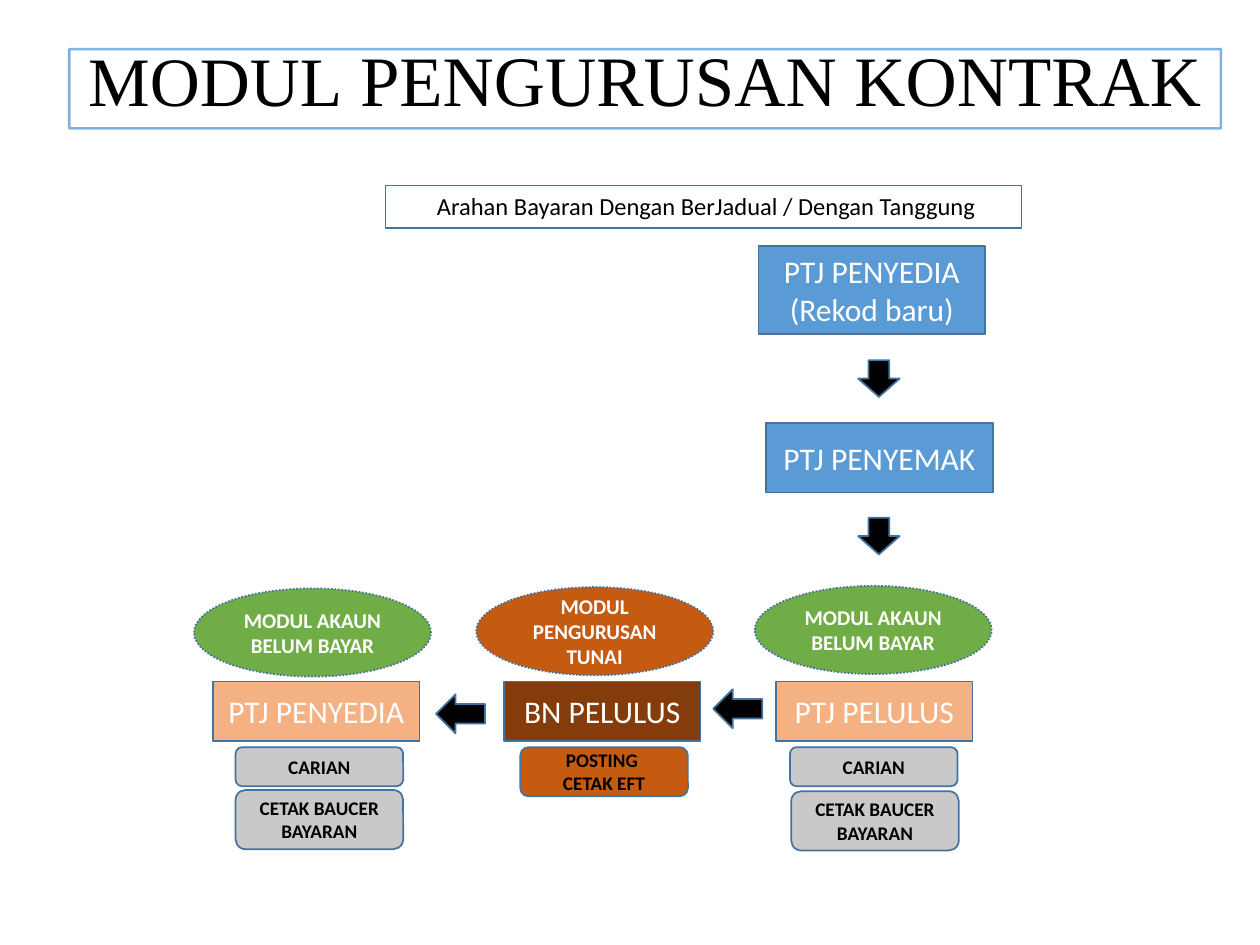
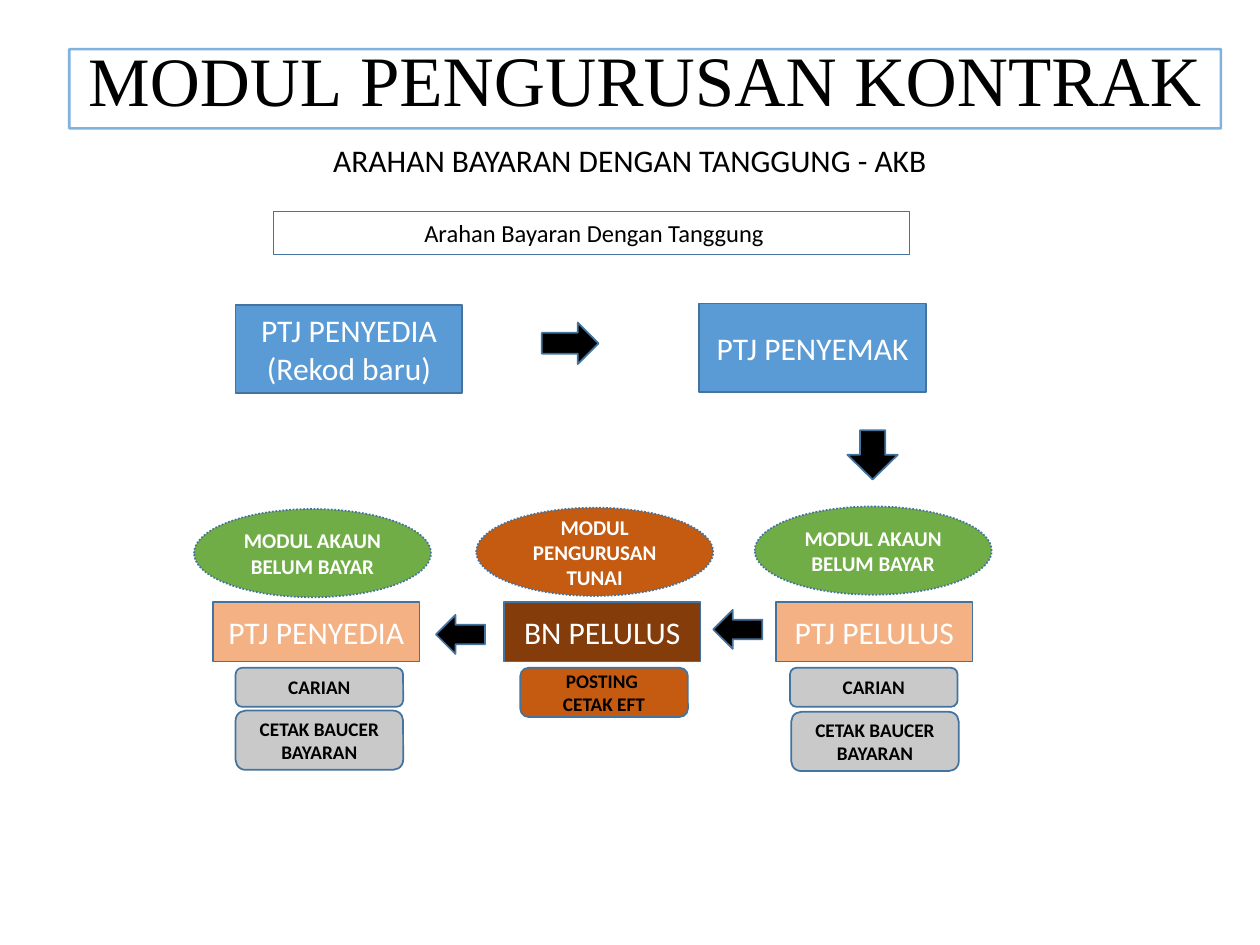
from dataclasses import dataclass

from lxml import etree
from pptx import Presentation
from pptx.dml.color import RGBColor
from pptx.enum.dml import MSO_LINE
from pptx.enum.shapes import MSO_SHAPE
from pptx.enum.text import MSO_ANCHOR, PP_ALIGN
from pptx.oxml.ns import qn
from pptx.util import Pt

RECTANGLE = MSO_SHAPE.RECTANGLE
ROUNDED = MSO_SHAPE.ROUNDED_RECTANGLE
ELLIPSE = MSO_SHAPE.OVAL
ARROW = MSO_SHAPE.RIGHT_ARROW
DOTTED = MSO_LINE.ROUND_DOT
TOP, MIDDLE, BOTTOM = MSO_ANCHOR.TOP, MSO_ANCHOR.MIDDLE, MSO_ANCHOR.BOTTOM
CENTER = PP_ALIGN.CENTER

EMU_PER_PX = 9144  # 100 px to the inch
RIGHT, DOWN, LEFT = 0, 90, 180


@dataclass(frozen=True)
class Theme:
    black: str = "000000"
    white: str = "FFFFFF"
    outline: str = "43739E"
    blue: str = "5B9BD5"
    green: str = "70AD47"
    orange: str = "C55A11"
    brown: str = "843C0B"
    peach: str = "F4B183"
    grey: str = "C9C9C9"
    body_font: str = "Calibri"
    title_font: str = "Times New Roman"
    title_first_size: float = 39.6
    title_size: float = 40.5
    role_size: int = 18
    banner_size: int = 14
    module_size: int = 12
    task_size: int = 11


@dataclass(frozen=True)
class Stage:
    """One column of the payment row; offsets are measured from the role box."""
    role: str
    role_left: int
    role_width: int
    role_fill: str
    module: str
    module_left: int
    module_offset: int
    module_fill: str
    task_fill: str
    tasks: tuple  # (lines, left, offset, height)


class FlowDeck:
    def __init__(self, theme):
        self.theme = theme
        self.presentation = Presentation()
        self.presentation.slide_width = 1000 * EMU_PER_PX
        self.presentation.slide_height = 750 * EMU_PER_PX
        self.slide = None

    def new_slide(self):
        self.slide = self.presentation.slides.add_slide(self.presentation.slide_layouts[6])
        self.title()

    def shape(self, kind, box, fill=None, line=None, width=1, dash=None):
        shape = self.slide.shapes.add_shape(kind, *(v * EMU_PER_PX for v in box))
        shape.shadow.inherit = False
        if fill:
            shape.fill.solid()
            shape.fill.fore_color.rgb = RGBColor.from_string(fill)
        else:
            shape.fill.background()
        shape.line.color.rgb = RGBColor.from_string(line or self.theme.outline)
        shape.line.width = Pt(width)
        if dash:
            shape.line.dash_style = dash
        return shape

    def set_text(self, shape, lines, size, color, bold=False, font=None, anchor=MIDDLE):
        """Fill a shape with centred lines; a line is a string or (text, size) pairs."""
        frame = shape.text_frame
        frame.word_wrap = True
        frame.vertical_anchor = anchor
        for index, line in enumerate(lines):
            paragraph = frame.add_paragraph() if index else frame.paragraphs[0]
            paragraph.alignment = CENTER
            for text, run_size in [(line, size)] if isinstance(line, str) else line:
                run = paragraph.add_run()
                run.text = text
                run.font.color.rgb = RGBColor.from_string(color)
                values = {"name": font or self.theme.body_font,
                          "size": Pt(run_size), "bold": bold}
                for name, value in values.items():
                    setattr(run.font, name, value)

    def title(self):
        theme = self.theme
        frame = self.shape(RECTANGLE, (55, 39, 914, 63), line=theme.blue, width=1.5)
        line_color = frame.element.spPr.find(".//" + qn("a:srgbClr"))
        etree.SubElement(line_color, qn("a:alpha"), val="76000")
        line = [("MODUL", theme.title_first_size),
                (" PENGURUSAN KONTRAK", theme.title_size)]
        self.set_text(frame, [line], theme.title_size, theme.black,
                      font=theme.title_font, anchor=BOTTOM)
        frame.text_frame.paragraphs[0].line_spacing = 0.9

    def subtitle(self, text):
        box = self.slide.shapes.add_textbox(*(v * EMU_PER_PX for v in (98, 107, 804, 40)))
        self.set_text(box, [text], self.theme.role_size, self.theme.black, anchor=TOP)

    def banner(self, left, top, text):
        box = self.shape(RECTANGLE, (left, top, 505, 34), width=0.75)
        box.text_frame.margin_left = 14 * EMU_PER_PX
        self.set_text(box, [text], self.theme.banner_size, self.theme.black, anchor=TOP)

    def role(self, box, lines, fill):
        self.set_text(self.shape(RECTANGLE, box, fill), lines,
                      self.theme.role_size, self.theme.white)

    def module(self, left, top, text, fill):
        ellipse = self.shape(ELLIPSE, (left, top, 188, 70), fill, dash=DOTTED)
        self.set_text(ellipse, [text], self.theme.module_size, self.theme.white, bold=True)

    def task(self, box, lines, fill):
        self.set_text(self.shape(ROUNDED, box, fill), lines,
                      self.theme.task_size, self.theme.black, bold=True)

    def arrow(self, box, direction):
        self.shape(ARROW, box, self.theme.black).rotation = direction

    def payment_row(self, stages, top):
        for stage in stages:
            self.module(stage.module_left, top + stage.module_offset,
                        stage.module, stage.module_fill)
            self.role((stage.role_left, top, stage.role_width, 47),
                      [stage.role], stage.role_fill)
            for lines, left, offset, height in stage.tasks:
                self.task((left, top + offset, 133, height), lines, stage.task_fill)
        for left, offset in ((566, 6), (346, 10)):
            self.arrow((left, top + offset, 39, 31), LEFT)


def payment_stages(theme):
    search, voucher = ["CARIAN"], ["CETAK BAUCER BAYARAN"]
    return [
        Stage("PTJ PENYEDIA", 169, 164, theme.peach,
              "MODUL AKAUN BELUM BAYAR", 154, -74, theme.green, theme.grey,
              ((search, 187, 52, 31), (voucher, 187, 86, 47))),
        Stage("BN PELULUS", 400, 156, theme.brown,
              "MODUL PENGURUSAN TUNAI", 378, -75, theme.orange, theme.orange,
              ((["POSTING ", "CETAK EFT"], 413, 52, 39),)),
        Stage("PTJ PELULUS", 616, 156, theme.peach,
              "MODUL AKAUN BELUM BAYAR", 599, -76, theme.green, theme.grey,
              ((search, 627, 52, 31), (voucher, 628, 87, 47))),
    ]


def main():
    theme = Theme()
    deck = FlowDeck(theme)
    stages = payment_stages(theme)
    preparer, checker = ["PTJ PENYEDIA", "(Rekod baru)"], ["PTJ PENYEMAK"]

    deck.new_slide()
    deck.banner(306, 147, "Arahan Bayaran Dengan BerJadual / Dengan Tanggung")
    deck.role((602, 195, 180, 70), preparer, theme.blue)
    deck.role((608, 336, 180, 55), checker, theme.blue)
    for top in (284, 409):
        deck.arrow((683, top, 29, 33), DOWN)
    deck.payment_row(stages, 541)

    deck.new_slide()
    deck.subtitle("ARAHAN BAYARAN DENGAN TANGGUNG - AKB")
    deck.banner(217, 168, "Arahan Bayaran Dengan Tanggung")
    deck.role((187, 242, 180, 70), preparer, theme.blue)
    deck.role((555, 241, 180, 70), checker, theme.blue)
    deck.arrow((430, 256, 45, 33), RIGHT)
    deck.arrow((673, 341, 39, 40), DOWN)
    deck.payment_row(stages, 478)

    deck.presentation.save("out.pptx")


if __name__ == "__main__":
    main()
